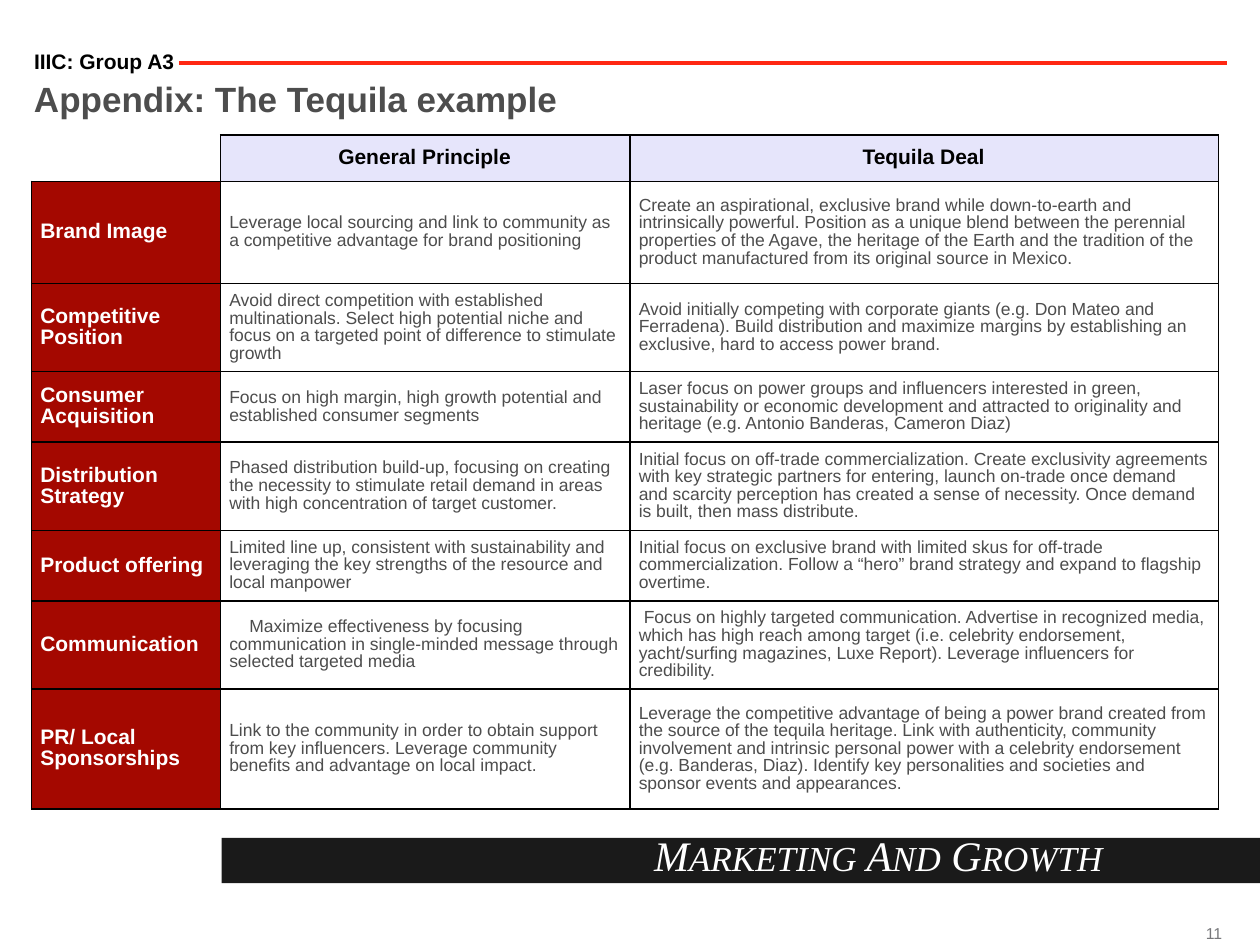
import pptx
import pptx.dml.color
import pptx.enum.shapes
import pptx.enum.text
import pptx.oxml
import pptx.oxml.ns
import pptx.util

Inches = pptx.util.Inches
Pt = pptx.util.Pt
RGBColor = pptx.dml.color.RGBColor
ALIGN = pptx.enum.text.PP_ALIGN
MIDDLE = pptx.enum.text.MSO_ANCHOR.MIDDLE

BLACK = RGBColor(0x00, 0x00, 0x00)
WHITE = RGBColor(0xFF, 0xFF, 0xFF)
CHARCOAL = RGBColor(0x1A, 0x1A, 0x1A)
DARK_GRAY = RGBColor(0x4D, 0x4D, 0x4D)
MID_GRAY = RGBColor(0x77, 0x78, 0x7B)
RED = RGBColor(0xFF, 0x27, 0x12)
DARK_RED = RGBColor(0xA4, 0x08, 0x00)
LAVENDER = RGBColor(0xE6, 0xE5, 0xFB)

COLUMN_WIDTHS = [1.5, 3.25, 4.67]
ROW_HEIGHTS = [0.37, 0.81, 0.7, 0.56, 0.7, 0.56, 0.7, 0.95]
FIRST_LINE_INDENTS = {(6, 1): 0.16, (6, 2): 0.04}
ROWS = [
    ("", "General Principle", "Tequila Deal"),
    ("Brand Image",
     "Leverage local sourcing and link to community as a competitive advantage for brand positioning",
     "Create an aspirational, exclusive brand while down-to-earth and intrinsically powerful. "
     "Position as a unique blend between the perennial properties of the Agave, the heritage of "
     "the Earth and the tradition of the product manufactured from its original source in Mexico."),
    ("Competitive Position",
     "Avoid direct competition with established multinationals. Select high potential niche and "
     "focus on a targeted point of difference to stimulate growth",
     "Avoid initially competing with corporate giants (e.g. Don Mateo and Ferradena). Build "
     "distribution and maximize margins by establishing an exclusive, hard to access power brand."),
    ("Consumer Acquisition",
     "Focus on high margin, high growth potential and established consumer segments",
     "Laser focus on power groups and influencers interested in green, sustainability or economic "
     "development and attracted to originality and heritage (e.g. Antonio Banderas, Cameron Diaz)"),
    ("Distribution Strategy",
     "Phased distribution build-up, focusing on creating the necessity to stimulate retail demand "
     "in areas with high concentration of target customer.",
     "Initial focus on off-trade commercialization. Create exclusivity agreements with key "
     "strategic partners for entering, launch on-trade once demand and scarcity perception has "
     "created a sense of necessity. Once demand is built, then mass distribute."),
    ("Product offering",
     "Limited line up, consistent with sustainability and leveraging the key strengths of the "
     "resource and local manpower",
     "Initial focus on exclusive brand with limited skus for off-trade commercialization. Follow "
     "a “hero” brand strategy and expand to flagship overtime."),
    ("Communication",
     "Maximize effectiveness by focusing communication in single-minded message through selected "
     "targeted media",
     "Focus on highly targeted communication. Advertise in recognized media, which has high reach "
     "among target (i.e. celebrity endorsement, yacht/surfing magazines, Luxe Report). Leverage "
     "influencers for credibility."),
    ("PR/ Local Sponsorships",
     "Link to the community in order to obtain support from key influencers. Leverage community "
     "benefits and advantage on local impact.",
     "Leverage the competitive advantage of being a power brand created from the source of the "
     "tequila heritage. Link with authenticity, community involvement and intrinsic personal "
     "power with a celebrity endorsement (e.g. Banderas, Diaz). Identify key personalities and "
     "societies and sponsor events and appearances."),
]


def set_font(paragraph, size, color, bold=False, name="Arial"):
    font = paragraph.font
    font.name, font.size, font.bold = name, Pt(size), bold
    font.color.rgb = color


def set_margins(target, left, right, vertical):
    target.margin_left, target.margin_right = Inches(left), Inches(right)
    target.margin_top = target.margin_bottom = Inches(vertical)


def add_text(slide, left, top, width, height):
    frame = slide.shapes.add_textbox(
        Inches(left), Inches(top), Inches(width), Inches(height)).text_frame
    frame.word_wrap = True
    set_margins(frame, 0, 0, 0)
    return frame


def add_header(slide, left, top, width):
    for text, offset, box_width, height, size, color in (
        ("Appendix: The Tequila example", 0.24, width, 1.64, 20, DARK_GRAY),
        ("IIIC: Group A3", 0, 1.41, 0.18, 12, BLACK),
    ):
        paragraph = add_text(slide, left, top + offset, box_width, height).paragraphs[0]
        paragraph.text = text
        paragraph.line_spacing = 0.9
        set_font(paragraph, size, color, bold=True)
    rule = slide.shapes.add_connector(
        pptx.enum.shapes.MSO_CONNECTOR.STRAIGHT,
        Inches(left + 1.15), Inches(top + 0.09), Inches(left + width), Inches(top + 0.09))
    rule.line.color.rgb = RED
    rule.line.width = Pt(2.25)
    rule._element.spPr.append(pptx.oxml.parse_xml(
        f'<a:effectLst {pptx.oxml.ns.nsdecls("a")}/>'))


def set_borders(cell, hidden):
    properties = cell._tc.get_or_add_tcPr()
    for position, side in enumerate(("lnL", "lnR", "lnT", "lnB")):
        paint = "<a:noFill/>" if side in hidden else (
            f'<a:solidFill><a:srgbClr val="{BLACK}"/></a:solidFill>')
        properties.insert(position, pptx.oxml.parse_xml(
            f'<a:{side} {pptx.oxml.ns.nsdecls("a")} w="{Pt(1)}">{paint}</a:{side}>'))


def fill_cell(cell, row, column, text):
    is_corner = row == column == 0
    if is_corner:
        cell.fill.background()
    else:
        cell.fill.solid()
        cell.fill.fore_color.rgb = LAVENDER if row == 0 else DARK_RED if column == 0 else WHITE
    set_borders(cell, ("lnL", "lnT") if is_corner else ())
    set_margins(cell, 0.07, 0.08, 0.04)
    cell.vertical_anchor = MIDDLE
    paragraph = cell.text_frame.paragraphs[0]
    paragraph.text = text
    paragraph.line_spacing = 0.9
    paragraph.alignment = ALIGN.CENTER if row == 0 else ALIGN.LEFT
    if row == 0:
        set_font(paragraph, 12, BLACK, bold=True)
    elif column == 0:
        set_font(paragraph, 12, WHITE, bold=True)
    else:
        set_font(paragraph, 10, DARK_GRAY)
    indent = FIRST_LINE_INDENTS.get((row, column))
    if indent:
        properties = paragraph._p.get_or_add_pPr()
        properties.set("marL", "0")
        properties.set("indent", str(Inches(indent)))


def add_strategy_table(slide, left, top):
    table = slide.shapes.add_table(
        len(ROWS), len(COLUMN_WIDTHS), Inches(left), Inches(top),
        Inches(sum(COLUMN_WIDTHS)), Inches(sum(ROW_HEIGHTS))).table
    table.first_row = table.horz_banding = False
    for column, width in zip(table.columns, COLUMN_WIDTHS):
        column.width = Inches(width)
    for row, height in zip(table.rows, ROW_HEIGHTS):
        row.height = Inches(height)
    for row, texts in enumerate(ROWS):
        for column, text in enumerate(texts):
            fill_cell(table.cell(row, column), row, column, text)


def add_footer(slide, left, top, width):
    band = slide.shapes.add_shape(
        pptx.enum.shapes.MSO_SHAPE.RECTANGLE,
        Inches(left), Inches(top), Inches(width), Inches(0.36))
    band.shadow.inherit = False
    band.fill.solid()
    band.fill.fore_color.rgb = CHARCOAL
    band.line.fill.background()

    paragraph = add_text(slide, left - 0.54, top - 0.07, 7.53, 0.46).paragraphs[0]
    paragraph.alignment = ALIGN.RIGHT
    set_font(paragraph, 20, WHITE, name="Times New Roman")
    paragraph.font.italic = True
    for initial, rest in (("M", "ARKETING"), (" A", "ND"), (" G", "ROWTH")):
        for text, size in ((initial, 24), (rest, 20)):
            run = paragraph.add_run()
            run.text = text
            run.font.size = Pt(size)


def add_page_number(slide, left, top, width):
    frame = add_text(slide, left, top, width, 0.14)
    frame.vertical_anchor = MIDDLE
    paragraph = frame.paragraphs[0]
    paragraph.text = "11"
    paragraph.alignment = ALIGN.RIGHT
    set_font(paragraph, 9, MID_GRAY)


def main():
    presentation = pptx.Presentation()
    presentation.slide_width = Inches(10)
    presentation.slide_height = Inches(7.5)
    slide = presentation.slides.add_slide(presentation.slide_layouts[6])
    add_page_number(slide, 9.45, 7.34, 0.25)
    add_footer(slide, 1.76, 6.65, 8.24)
    add_header(slide, 0.27, 0.41, 9.47)
    add_strategy_table(slide, 0.25, 1.07)
    presentation.save("out.pptx")


if __name__ == "__main__":
    main()
